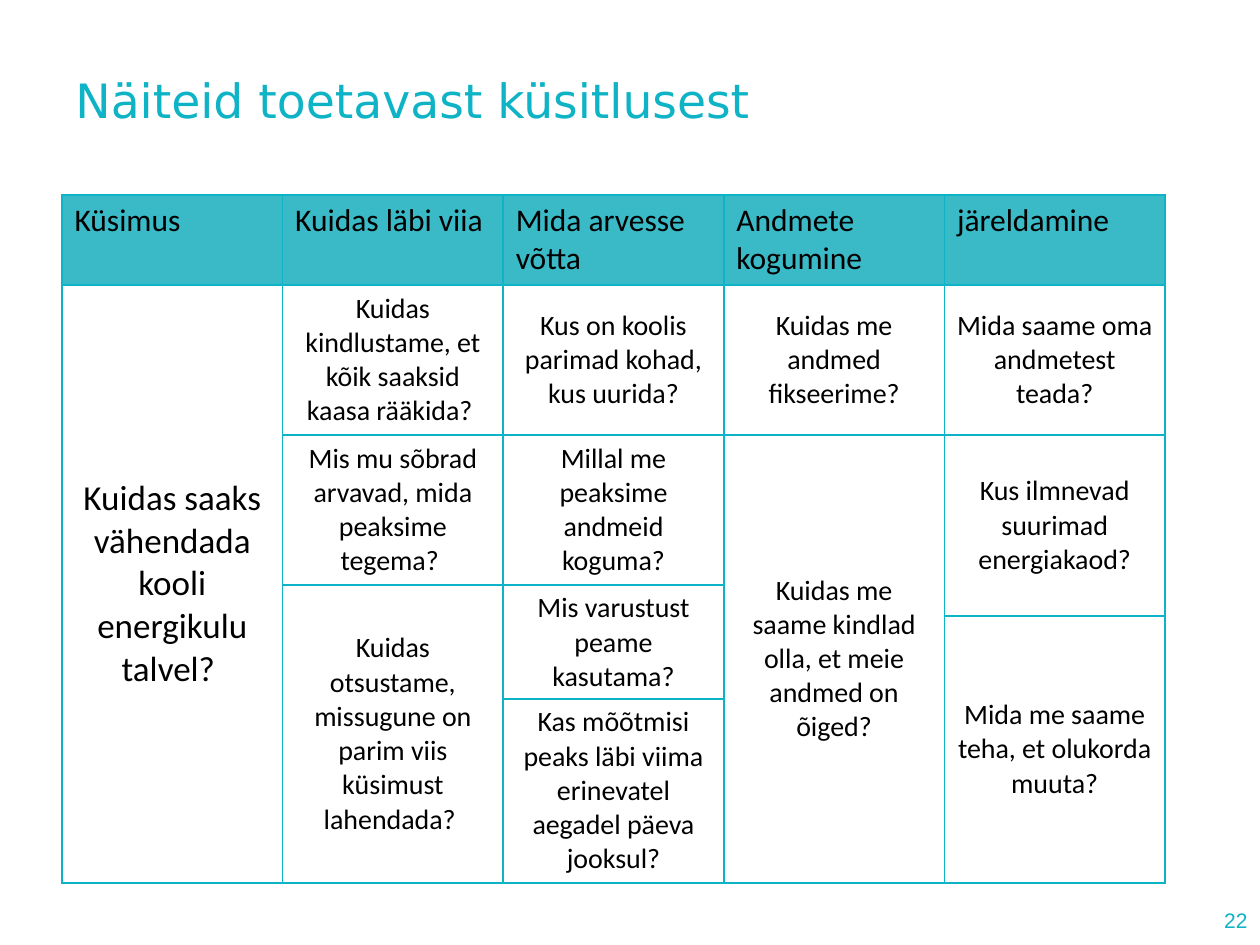
from lxml.etree import SubElement
from pptx import Presentation
from pptx.dml.color import RGBColor as Rgb
from pptx.enum.text import MSO_ANCHOR as Anchor, PP_ALIGN as Align
from pptx.oxml.ns import qn
from pptx.util import Emu, Pt

SIZE = (1260, 945)
TITLE = ("Näiteid toetavast küsitlusest", (63, 21, 1103, 158))
PAGE = ("22", (1008, 895, 252, 50))
GRID = (62, 195, 1103, 688)
ROWS = [90, 150, 150, 31, 83, 184]
HEADS = ["Küsimus", "Kuidas läbi viia", "Mida arvesse võtta",
         "Andmete kogumine", "järeldamine"]
COLS = [
    [(5, "Kuidas saaks vähendada kooli energikulu talvel? ")],
    [(1, "Kuidas kindlustame, et kõik saaksid kaasa rääkida? "),
     (1, "Mis mu sõbrad arvavad, mida peaksime tegema? "),
     (3, "Kuidas otsustame, missugune on parim viis küsimust lahendada? ")],
    [(1, "Kus on koolis parimad kohad, kus uurida?"),
     (1, "Millal me peaksime andmeid koguma?"),
     (2, "Mis varustust peame kasutama?"),
     (1, "Kas mõõtmisi peaks läbi viima erinevatel aegadel päeva jooksul?")],
    [(1, "Kuidas me andmed fikseerime?"),
     (4, "Kuidas me saame kindlad olla, et meie andmed on õiged?")],
    [(1, "Mida saame oma andmetest teada?"),
     (2, "Kus ilmnevad suurimad energiakaod?"),
     (2, "Mida me saame teha, et olukorda muuta?")],
]
THEME = {
    "line": "0EB3C5", "head": "3AB9C6", "body": "FFFFFF",
    "title": {"name": "DejaVu Sans", "size": 27, "color": "0EB3C5"},
    "page": {"name": "Arial", "size": 12, "color": "0EB3C5"},
    "top": {"name": "Calibri", "size": 18, "color": "000000"},
    "ask": {"name": "Calibri", "size": 20, "color": "000000"},
    "cell": {"name": "Calibri", "size": 16, "color": "000000"},
}


def px(num):
    return Emu(round(num * 914400 / 126))


def write(frame, text, style, align):
    para = frame.paragraphs[0]
    para.alignment = align
    run = para.add_run()
    run.text = text
    look = THEME[style]
    run.font.color.rgb = Rgb.from_string(look["color"])
    for key, val in {"name": look["name"], "size": Pt(look["size"])}.items():
        setattr(run.font, key, val)


def label(slide, item, style, align):
    text, box = item
    frame = slide.shapes.add_textbox(*map(px, box)).text_frame
    for key, val in {"word_wrap": True, "vertical_anchor": Anchor.MIDDLE}.items():
        setattr(frame, key, val)
    write(frame, text, style, align)


def edge(cell, fill):
    props = cell._tc.get_or_add_tcPr()
    for side in "LRTB":
        line = SubElement(props, qn(f"a:ln{side}"), w=str(Pt(1)))
        paint = SubElement(line, qn("a:solidFill"))
        SubElement(paint, qn("a:srgbClr"), val=THEME["line"])
    cell.fill.solid()
    cell.fill.fore_color.rgb = Rgb.from_string(THEME[fill])


def build(slide):
    table = slide.shapes.add_table(len(ROWS), len(COLS), *map(px, GRID)).table
    for row, high in zip(table.rows, ROWS):
        row.height = px(high)
    for col in table.columns:
        col.width = px(GRID[2] / len(COLS))
    for r in range(len(ROWS)):
        for c in range(len(COLS)):
            edge(table.cell(r, c), "body" if r else "head")
    for c, (head, col) in enumerate(zip(HEADS, COLS)):
        write(table.cell(0, c).text_frame, head, "top", Align.LEFT)
        r = 1
        for span, text in col:
            cell = table.cell(r, c)
            if span > 1:
                cell.merge(table.cell(r + span - 1, c))
            cell.vertical_anchor = Anchor.MIDDLE
            write(cell.text_frame, text, "cell" if c else "ask", Align.CENTER)
            r += span


def main():
    deck = Presentation()
    deck.slide_width, deck.slide_height = map(px, SIZE)
    slide = deck.slides.add_slide(deck.slide_layouts[6])
    label(slide, TITLE, "title", Align.LEFT)
    build(slide)
    label(slide, PAGE, "page", Align.RIGHT)
    deck.save("out.pptx")


if __name__ == "__main__":
    main()
